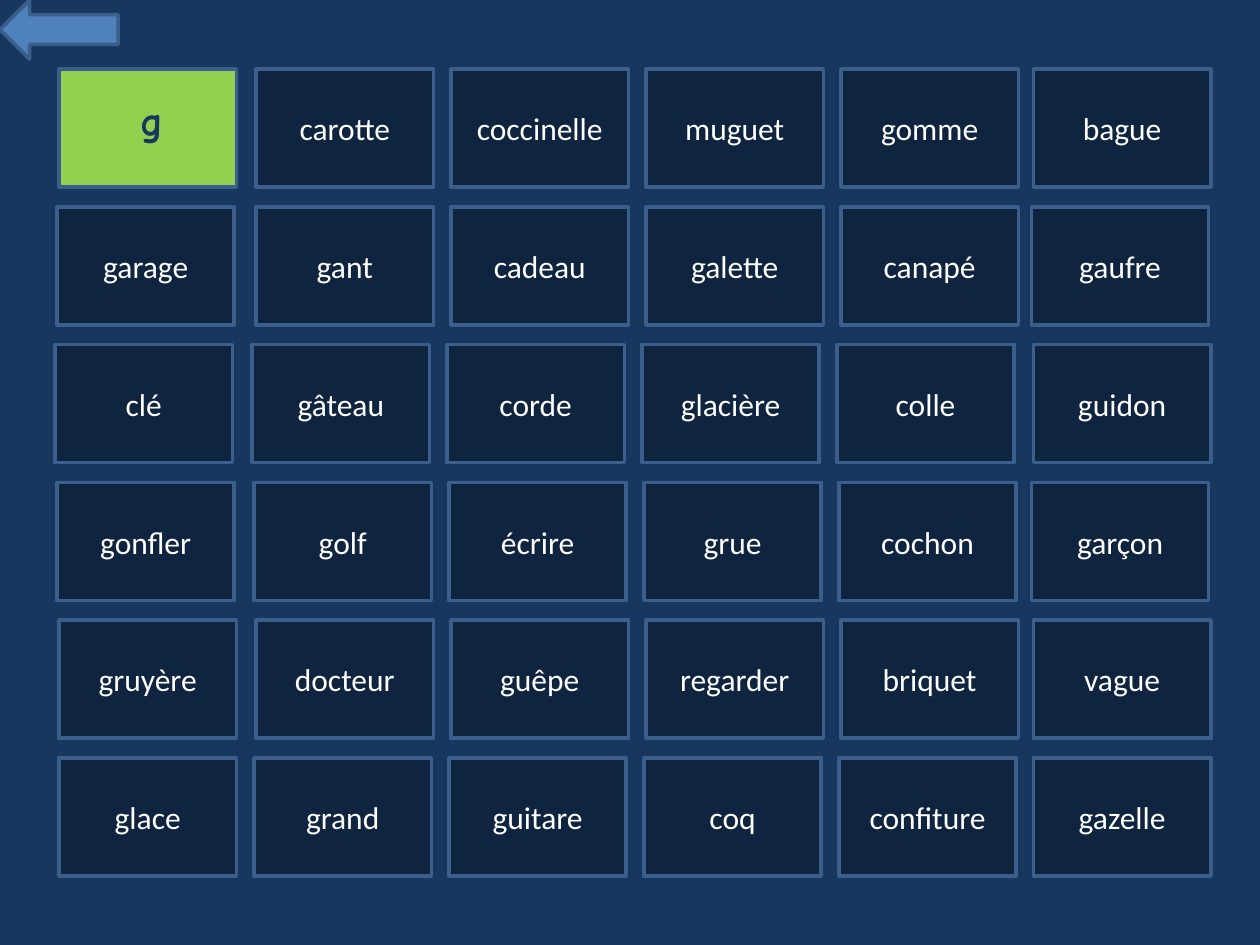
import pptx
import pptx.dml.color
import pptx.enum.shapes
import pptx.enum.text
import pptx.util

Pt = pptx.util.Pt
SHAPE = pptx.enum.shapes.MSO_SHAPE

LETTER = "g"
# Left edges of the first, second and last card, then the words of the row
ROWS = [
    ((33.8, 146.4, 590.6), ["", "carotte", "coccinelle", "muguet", "gomme", "bague"]),
    ((32.6, 146.4, 589.4), ["garage", "gant", "cadeau", "galette", "canapé", "gaufre"]),
    ((31.5, 144.1, 590.6), ["clé", "gâteau", "corde", "glacière", "colle", "guidon"]),
    ((32.6, 145.2, 589.4), ["gonfler", "golf", "écrire", "grue", "cochon", "garçon"]),
    ((33.8, 146.4, 590.6), ["gruyère", "docteur", "guêpe", "regarder", "briquet", "vague"]),
    ((33.8, 145.2, 590.6), ["glace", "grand", "guitare", "coq", "confiture", "gazelle"]),
]
COLORS = {
    "background": "17375E",
    "card": "0F243E",
    "letter_card": "92D050",
    "arrow": "4F81BD",
    "border": "3A5F8C",
    "word": "FFFFFF",
}
TOP, ROW_STEP, COLUMN_STEP = 39.4, 78.75, 111.4
CARD_W, CARD_H = 101.3, 67.5


def rgb(name):
    return pptx.dml.color.RGBColor.from_string(COLORS[name])


def add_box(s, kind, left, top, width, height, fill):
    sp = s.shapes.add_shape(kind, Pt(left), Pt(top), Pt(width), Pt(height))
    sp.shadow.inherit = False
    sp.fill.solid()
    sp.fill.fore_color.rgb = rgb(fill)
    sp.line.color.rgb = rgb("border")
    sp.line.width = Pt(2)
    return sp


def write(sp, text, font, size, color, bold=False):
    p = sp.text_frame.paragraphs[0]
    p.text = text
    p.font.name = font
    p.font.size = Pt(size)
    p.font.bold = bold
    p.font.color.rgb = rgb(color)
    return p


def add_cards(s):
    for row, ((first, second, last), words) in enumerate(ROWS):
        lefts = [first, *(second + i * COLUMN_STEP for i in range(4)), last]
        for left, word in zip(lefts, words):
            sp = add_box(s, SHAPE.RECTANGLE, left, TOP + row * ROW_STEP,
                         CARD_W, CARD_H, "card" if word else "letter_card")
            if word:
                sp.text_frame.vertical_anchor = pptx.enum.text.MSO_ANCHOR.MIDDLE
                p = write(sp, word, "Calibri", 18, "word")
                p.alignment = pptx.enum.text.PP_ALIGN.CENTER


def add_letter(s):
    sp = s.shapes.add_textbox(Pt(73.4), Pt(50.4), Pt(45.4), Pt(36))
    sp.text_frame.word_wrap = True
    sp.text_frame.auto_size = pptx.enum.text.MSO_AUTO_SIZE.SHAPE_TO_FIT_TEXT
    write(sp, LETTER, "Comic Neue", 24, "background", bold=True)


def main():
    prs = pptx.Presentation()
    prs.slide_width, prs.slide_height = Pt(720), Pt(540)
    s = prs.slides.add_slide(prs.slide_layouts.get_by_name("Blank"))
    s.background.fill.solid()
    s.background.fill.fore_color.rgb = rgb("background")
    add_cards(s)
    add_letter(s)
    add_box(s, SHAPE.LEFT_ARROW, 0, 0, 67.5, 33.75, "arrow")
    prs.save("out.pptx")


if __name__ == "__main__":
    main()
